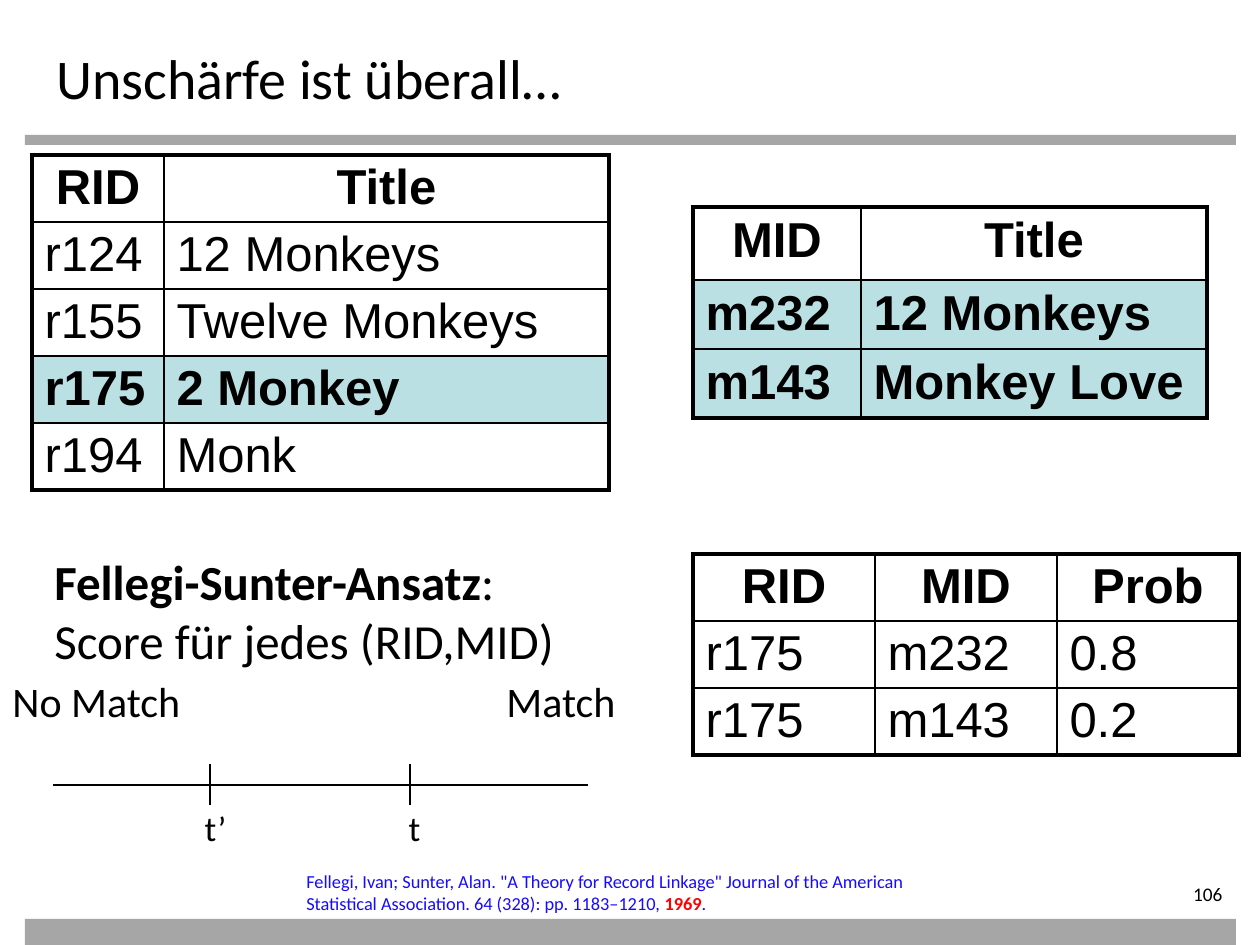
from pptx import Presentation
from pptx.dml.color import RGBColor as RGB
from pptx.enum.shapes import MSO_CONNECTOR as CONN, MSO_SHAPE as SHAPE
from pptx.enum.text import PP_ALIGN as AL
from pptx.oxml import parse_xml
from pptx.oxml.ns import nsdecls
from pptx.util import Emu, Pt

PX = 914400 / 126


class Theme:
    black = RGB(0x00, 0x00, 0x00)
    bar = RGB(0xA6, 0xA6, 0xA6)
    highlight = RGB(0xBB, 0xE0, 0xE3)
    cite = RGB(0x17, 0x0B, 0xFF)
    year = RGB(0xFF, 0x00, 0x00)
    body, grid = "Calibri", "Arial"
    title, large, label, tick, number, note = 32, 28, 24, 20, 11, 10.5
    outer, inner, axis = 2.25, 1, 0.75


def px(*values):
    return [Emu(round(v * PX)) for v in values]


def write(p, text, size, name=Theme.body, bold=False, color=Theme.black):
    r = p.add_run()
    r.text = text
    for key, value in dict(name=name, size=Pt(size), bold=bold).items():
        setattr(r.font, key, value)
    r.font.color.rgb = color


prs = Presentation()
prs.slide_width, prs.slide_height = px(1260, 945)
s = prs.slides.add_slide(prs.slide_layouts[6])

# Grey bars
for top, height in [(135, 10), (919, 26)]:
    sp = s.shapes.add_shape(SHAPE.RECTANGLE, *px(25, top, 1211, height))
    sp.shadow.inherit = False
    sp.fill.solid()
    sp.fill.fore_color.rgb = Theme.bar
    sp.line.fill.background()

# Tables: position, column widths, row heights, vertical margin, highlighted rows, rows
tables = [
    ((32, 155), [132, 445], [67] * 5, 5, [3],
     [("RID", "Title"), ("r124", "12 Monkeys"), ("r155", "Twelve Monkeys"),
      ("r175", "2 Monkey"), ("r194", "Monk")]),
    ((693, 207), [168, 346], [73, 69, 69], 6, [1, 2],
     [("MID", "Title"), ("m232", "12 Monkeys"), ("m143", "Monkey Love")]),
    ((693, 554), [182] * 3, [67] * 3, 5, [],
     [("RID", "MID", "Prob"), ("r175", "m232", "0.8"), ("r175", "m143", "0.2")]),
]
for pos, widths, heights, margin, marked, rows in tables:
    frame = s.shapes.add_table(len(rows), len(widths),
                               *px(*pos, sum(widths), sum(heights)))
    tbl = frame.table
    tbl.first_row = tbl.horz_banding = False
    for col, width in zip(tbl.columns, px(*widths)):
        col.width = width
    for row, height in zip(tbl.rows, px(*heights)):
        row.height = height
    for i, values in enumerate(rows):
        for j, value in enumerate(values):
            cell = tbl.cell(i, j)
            cell.margin_top, cell.margin_bottom = px(margin, margin)
            p = cell.text_frame.paragraphs[0]
            p.alignment = AL.LEFT if i else AL.CENTER
            write(p, value, Theme.large, Theme.grid, i == 0 or i in marked)
            edges = dict(L=j == 0, R=j == len(widths) - 1,
                         T=i == 0, B=i == len(rows) - 1)
            for side, is_outer in edges.items():
                width = Pt(Theme.outer if is_outer else Theme.inner)
                cell._tc.get_or_add_tcPr().append(parse_xml(
                    f'<a:ln{side} {nsdecls("a")} w="{width}"><a:solidFill>'
                    f'<a:srgbClr val="{Theme.black}"/></a:solidFill></a:ln{side}>'))
            if i in marked:
                cell.fill.solid()
                cell.fill.fore_color.rgb = Theme.highlight
            else:
                cell.fill.background()

# Score axis with its two thresholds
for ends in [(53, 785, 588, 785), (210, 764, 210, 805), (410, 764, 410, 805)]:
    line = s.shapes.add_connector(CONN.STRAIGHT, *px(*ends))
    line.line.color.rgb = Theme.black
    line.line.width = Pt(Theme.axis)
    line._element.spPr.append(parse_xml(f'<a:effectLst {nsdecls("a")}/>'))

# Texts: box, size, alignment, lines of (text, format) runs
texts = [
    ((44, 37, 1134, 189), Theme.title, AL.LEFT, [[("Unschärfe ist überall…", {})]]),
    ((42, 545, 714, 131), Theme.large, AL.LEFT,
     [[("Fellegi-Sunter-Ansatz", dict(bold=True)), (":", {})],
      [("Score für jedes (RID,MID)", {})]]),
    ((494, 669, 168, 63), Theme.label, AL.LEFT, [[("Match", {})]]),
    ((0, 669, 210, 63), Theme.label, AL.LEFT, [[("No Match", {})]]),
    ((189, 800, 53, 55), Theme.tick, AL.CENTER, [[("t’", {})]]),
    ((388, 800, 53, 55), Theme.tick, AL.CENTER, [[("t", {})]]),
    ((294, 864, 630, 57), Theme.note, AL.LEFT,
     [[('Fellegi, Ivan; Sunter, Alan. "A Theory for Record Linkage" Journal of the '
        "American Statistical Association. 64 (328): pp. 1183–1210, ",
        dict(color=Theme.cite)),
       ("1969", dict(color=Theme.year, bold=True)),
       (".", dict(color=Theme.cite))]]),
    ((1096, 876, 139, 40), Theme.number, AL.RIGHT, [[("106", {})]]),
]
for box, size, align, lines in texts:
    tf = s.shapes.add_textbox(*px(*box)).text_frame
    tf.word_wrap = True
    p = tf.paragraphs[0]
    p.alignment = align
    for n, runs in enumerate(lines):
        if n:
            p.add_line_break()
        for text, fmt in runs:
            write(p, text, size, **fmt)

prs.save("out.pptx")
